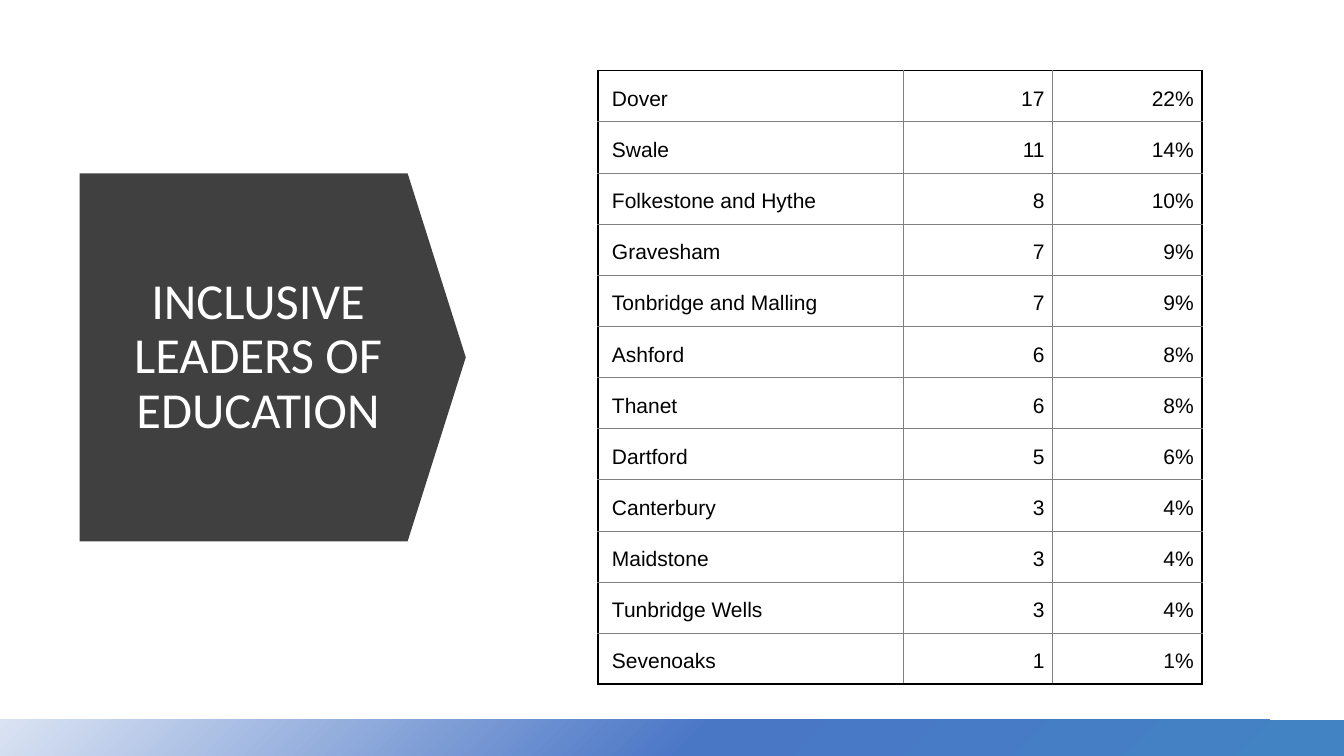
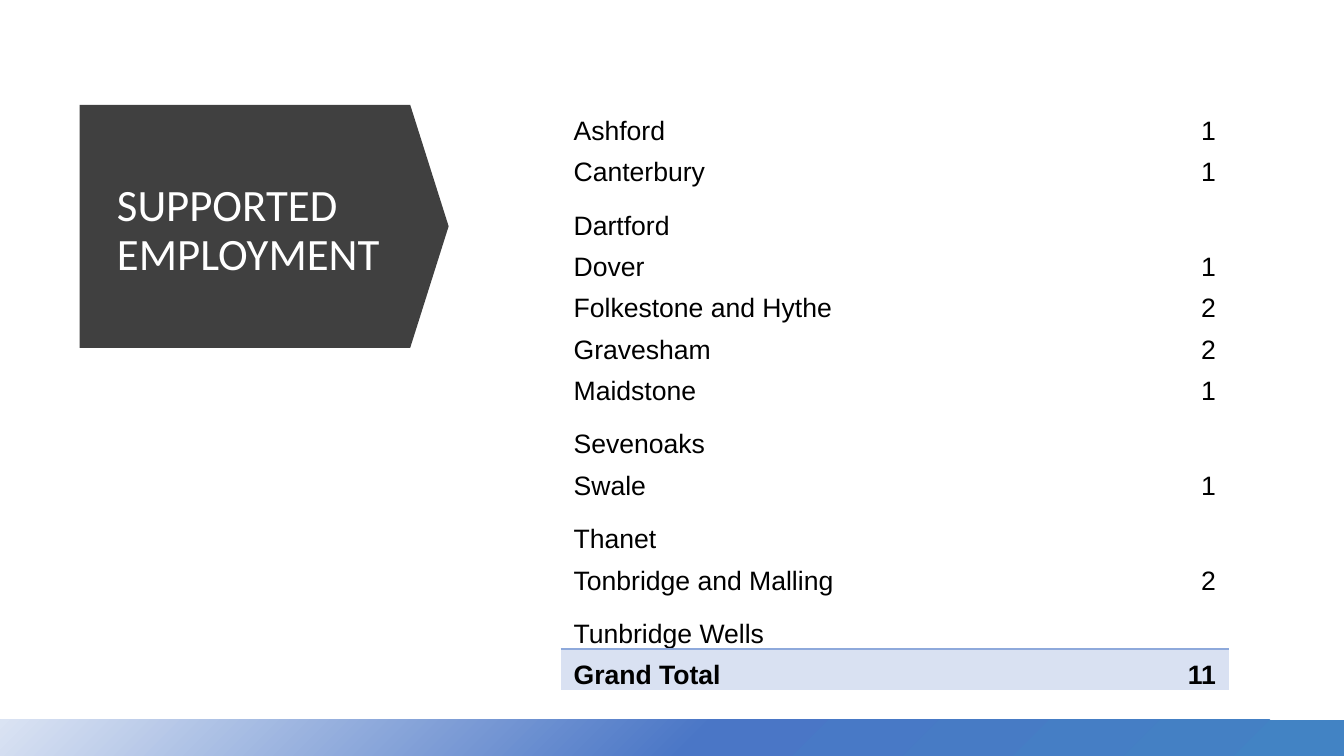
"""Build two slides of district counts, each with an arrow title and a table."""
from copy import deepcopy

from lxml import etree
from pptx import Presentation
from pptx import util as u
from pptx.dml.color import RGBColor
from pptx.enum import shapes, text
from pptx.oxml.ns import qn

COLOURS = {
    "arrow": "404040", "title": "FFFFFF", "body": "000000",
    "frame": "000000", "grid": "808080",
    "total": "D9E1F2", "total_rule": "8EA9DB",
    "band_end": "4283C4", "band_middle": "4A76C6", "band_start": "DAE3F3",
}
BAND_STOPS = [(0, "band_end"), (0.48, "band_middle"), (1, "band_start")]
PLAIN_TABLE = "{2D5ABB26-0587-4C30-8999-92F81FD0307C}"
ALIGN = text.PP_ALIGN

LEADERS = [
    ("Dover", "17", "22%"), ("Swale", "11", "14%"),
    ("Folkestone and Hythe", "8", "10%"), ("Gravesham", "7", "9%"),
    ("Tonbridge and Malling", "7", "9%"), ("Ashford", "6", "8%"),
    ("Thanet", "6", "8%"), ("Dartford", "5", "6%"),
    ("Canterbury", "3", "4%"), ("Maidstone", "3", "4%"),
    ("Tunbridge Wells", "3", "4%"), ("Sevenoaks", "1", "1%"),
]
EMPLOYMENT = [
    ("Ashford", "1"), ("Canterbury", "1"), ("Dartford", ""), ("Dover", "1"),
    ("Folkestone and Hythe", "2"), ("Gravesham", "2"), ("Maidstone", "1"),
    ("Sevenoaks", ""), ("Swale", "1"), ("Thanet", ""),
    ("Tonbridge and Malling", "2"), ("Tunbridge Wells", ""),
    ("Grand Total", "11"),
]


def rgb(name):
    return RGBColor.from_string(COLOURS[name])


def apply(target, values):
    for key, value in values.items():
        setattr(target, key, value)


def box(*lengths):
    return [u.Inches(length) for length in lengths]


class Deck:
    def __init__(self):
        self.prs = Presentation()
        apply(self.prs, {"slide_width": u.Inches(13.33), "slide_height": u.Inches(7.5)})
        self.layout = self.prs.slide_layouts[5]
        self.slide = None

    def new_slide(self):
        self.slide = self.prs.slides.add_slide(self.layout)

    def shape(self, preset, bounds):
        drawn = self.slide.shapes.add_shape(preset, *box(*bounds))
        drawn.shadow.inherit = False
        drawn.line.fill.background()
        return drawn

    def shared_band(self):
        band = self.shape(shapes.MSO_SHAPE.RECTANGLE, (0, 7.14, 13.33, 0.36))
        band.fill.gradient()
        band.fill.gradient_angle = 135
        stops = band.element.find(".//" + qn("a:gsLst"))
        stops.insert(1, deepcopy(stops[0]))
        for stop, (position, colour) in zip(band.fill.gradient_stops, BAND_STOPS):
            stop.position = position
            stop.color.rgb = rgb(colour)
        self.layout.shapes.element.insert(2, band.element)

    def arrow(self, bounds):
        arrow = self.shape(shapes.MSO_SHAPE.PENTAGON, bounds)
        arrow.adjustments[0] = 0.158
        arrow.fill.solid()
        arrow.fill.fore_color.rgb = rgb("arrow")
        self.slide.shapes.element.insert(2, arrow.element)

    def title(self, words, bounds, size, alignment):
        title = self.slide.shapes.title
        apply(title, dict(zip(("left", "top", "width", "height"), box(*bounds))))
        frame = title.text_frame
        frame.text = words
        apply(frame, {"word_wrap": True, "auto_size": text.MSO_AUTO_SIZE.NONE,
                      "vertical_anchor": text.MSO_ANCHOR.MIDDLE})
        paragraph = frame.paragraphs[0]
        apply(paragraph, {"alignment": alignment, "line_spacing": 0.9,
                          "space_after": u.Pt(6)})
        self.font(paragraph.runs[0], "Calibri", size, "title")

    def font(self, run, face, size, colour, bold=False):
        apply(run.font, {"name": face, "size": u.Pt(size), "bold": bold})
        run.font.color.rgb = rgb(colour)

    def borders(self, cell, lines):
        properties = cell._tc.get_or_add_tcPr()
        for side in "LRTB":
            if side in lines:
                colour, points = lines[side]
                line = etree.SubElement(properties, qn("a:ln" + side), w=str(u.Pt(points)))
                fill = etree.SubElement(line, qn("a:solidFill"))
                etree.SubElement(fill, qn("a:srgbClr"), val=COLOURS[colour])

    def table(self, rows, bounds, widths, size, margins, lines, total=None):
        graphic = self.slide.shapes.add_table(len(rows), len(widths), *box(*bounds))
        graphic.element.find(".//" + qn("a:tableStyleId")).text = PLAIN_TABLE
        table = graphic.table
        apply(table, {"first_row": False, "horz_banding": False})
        for column, width in zip(table.columns, widths):
            column.width = u.Inches(width)
        sides = ("margin_left", "margin_top", "margin_right", "margin_bottom")
        style = dict(zip(sides, box(*margins)), vertical_anchor=text.MSO_ANCHOR.BOTTOM)
        for r, row in enumerate(rows):
            for c, words in enumerate(row):
                cell = table.cell(r, c)
                apply(cell, style)
                self.borders(cell, lines(r, c))
                if r == total:
                    cell.fill.solid()
                    cell.fill.fore_color.rgb = rgb("total")
                else:
                    cell.fill.background()
                if words:
                    cell.text = words
                    paragraph = cell.text_frame.paragraphs[0]
                    paragraph.alignment = ALIGN.RIGHT if c else ALIGN.LEFT
                    self.font(paragraph.runs[0], "Arial", size, "body", r == total)
        return table


def leader_lines(r, c):
    edges = {"L": c == 0, "R": c == 2, "T": r == 0, "B": r == len(LEADERS) - 1}
    return {side: ("frame", 1.5) if outer else ("grid", 0.5)
            for side, outer in edges.items()}


def employment_lines(r, c):
    side = {len(EMPLOYMENT) - 2: "B", len(EMPLOYMENT) - 1: "T"}.get(r)
    return {side: ("total_rule", 1)} if side else {}


def main():
    deck = Deck()

    deck.new_slide()
    deck.shared_band()
    deck.arrow((0.79, 1.72, 3.83, 3.65))
    deck.title("INCLUSIVE LEADERS OF EDUCATION", (1.12, 2.15, 2.88, 2.79), 36, ALIGN.CENTER)
    deck.table(LEADERS, (5.93, 0.7, 6, 6.09), (3.03, 1.48, 1.48), 15,
               (0.14, 0.11, 0.08, 0.11), leader_lines)

    deck.new_slide()
    deck.arrow((0.79, 1.04, 3.66, 2.41))
    deck.title("SUPPORTED EMPLOYMENT", (1.06, 1.32, 2.92, 1.95), 32, ALIGN.LEFT)
    counts = deck.table(EMPLOYMENT, (5.56, 1.04, 6.63, 5.8), (4.49, 2.14), 19,
                        (0.13, 0.02, 0.13, 0), employment_lines,
                        total=len(EMPLOYMENT) - 1)
    for row, (_, count) in zip(counts.rows, EMPLOYMENT):
        row.height = u.Inches(0.41 if count else 0.53)

    deck.prs.save("out.pptx")


if __name__ == "__main__":
    main()
